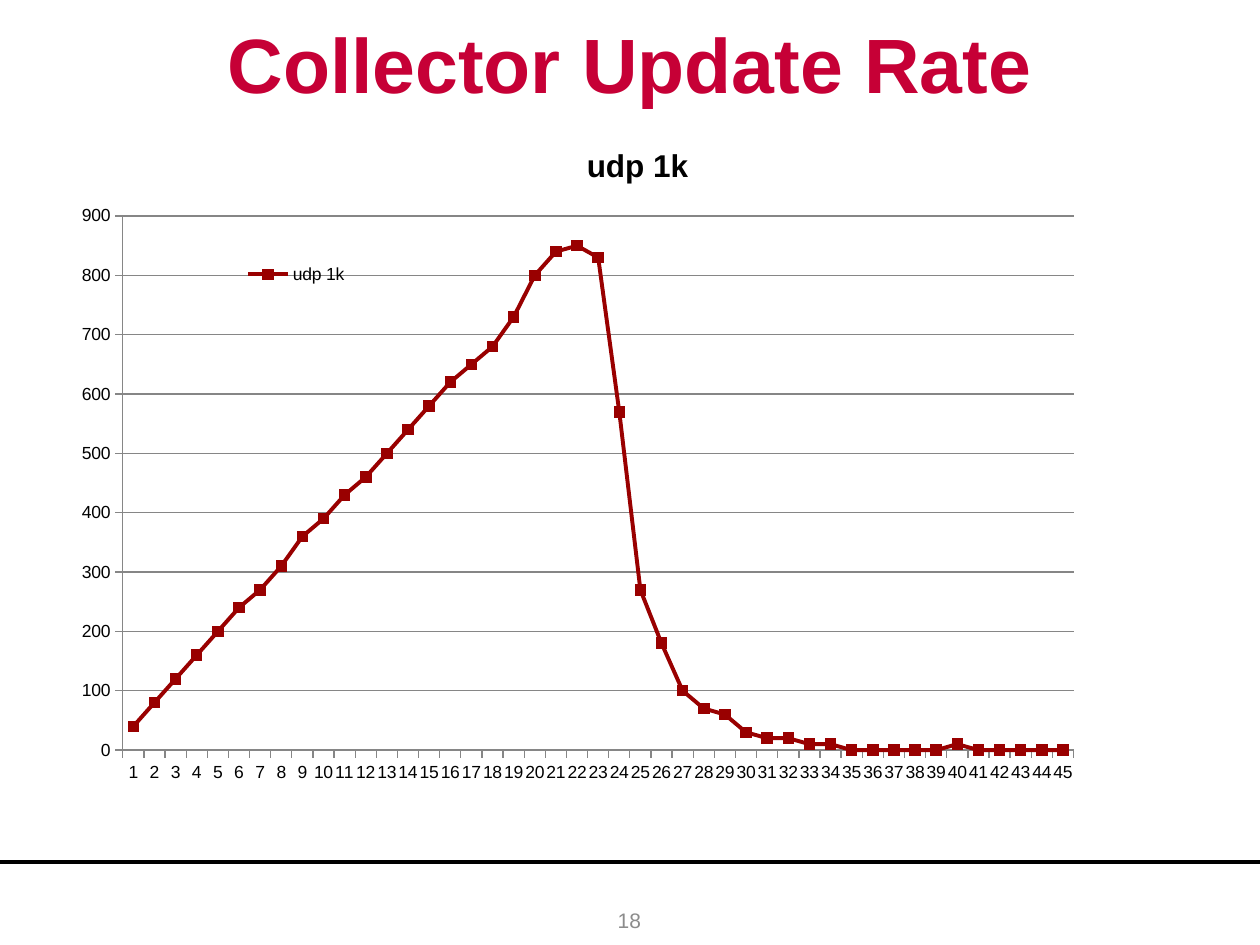
from lxml.etree import SubElement
from pptx import Presentation
from pptx.chart.data import CategoryChartData
from pptx.dml.color import RGBColor
from pptx.enum.chart import XL_CHART_TYPE, XL_LEGEND_POSITION, XL_MARKER_STYLE, XL_TICK_MARK
from pptx.enum.shapes import MSO_CONNECTOR
from pptx.enum.text import MSO_ANCHOR, PP_ALIGN
from pptx.oxml import parse_xml
from pptx.oxml.ns import nsdecls, qn
from pptx.util import Inches, Pt

FONT = "Arial"
CRIMSON = RGBColor(0xC6, 0x00, 0x36)
DARK_RED = RGBColor(0x99, 0x00, 0x00)
BLACK = RGBColor(0, 0, 0)
GRAY = RGBColor(0x8C, 0x8C, 0x8C)
AXIS_GRAY = RGBColor(0x86, 0x86, 0x86)

SERIES = "udp 1k"
RATES = [40, 80, 120, 160, 200, 240, 270, 310, 360, 390, 430, 460, 500, 540, 580,
         620, 650, 680, 730, 800, 840, 850, 830, 570, 270, 180, 100, 70, 60, 30,
         20, 20, 10, 10, 0, 0, 0, 0, 0, 10, 0, 0, 0, 0, 0]


def set_font(font, size, color, bold=False):
    font.name, font.size, font.bold = FONT, Pt(size), bold
    font.color.rgb = color


def write_text(tf, text, size, color, bold=False):
    """Centre one paragraph both ways in a text frame."""
    tf.word_wrap = True
    tf.vertical_anchor = MSO_ANCHOR.MIDDLE
    p = tf.paragraphs[0]
    p.alignment = PP_ALIGN.CENTER
    r = p.add_run()
    r.text = text
    set_font(r.font, size, color, bold)


def place(sp, x, y, w, h):
    sp.left, sp.top, sp.width, sp.height = (Inches(v) for v in (x, y, w, h))


def add_rule(s, y, width):
    line = s.shapes.add_connector(MSO_CONNECTOR.STRAIGHT, 0, Inches(y), width, Inches(y))
    line.line.color.rgb = BLACK
    line.line.width = Pt(2.25)
    SubElement(line._element.spPr, qn("a:effectLst"))


def set_layout(element, index, x, y, w, h, inner=False):
    """Fix the place of a chart part, in shares of the chart's size."""
    for old in element.findall(qn("c:layout")):
        element.remove(old)
    target = '<c:layoutTarget val="inner"/>' if inner else ""
    modes = '<c:xMode val="edge"/><c:yMode val="edge"/>'
    sizes = "".join(f'<c:{k} val="{v}"/>' for k, v in zip("xywh", (x, y, w, h)))
    element.insert(index, parse_xml(
        f'<c:layout {nsdecls("c")}><c:manualLayout>{target}{modes}{sizes}'
        "</c:manualLayout></c:layout>"))


def style_axis(axis):
    axis.major_tick_mark = XL_TICK_MARK.OUTSIDE
    axis.minor_tick_mark = XL_TICK_MARK.NONE
    axis.format.line.color.rgb = AXIS_GRAY
    set_font(axis.tick_labels.font, 10, BLACK)


def style_series(series):
    series.smooth = False
    series.format.line.color.rgb = DARK_RED
    series.format.line.width = Pt(2.25)
    marker = series.marker
    marker.style, marker.size = XL_MARKER_STYLE.SQUARE, 6
    marker.format.fill.solid()
    marker.format.fill.fore_color.rgb = DARK_RED
    marker.format.line.color.rgb = DARK_RED


def add_rate_chart(s):
    data = CategoryChartData()
    data.categories = [str(n) for n in range(1, len(RATES) + 1)]
    data.add_series(SERIES, RATES)
    box = [Inches(v) for v in (0.47, 0.94, 9.18, 5.38)]
    chart = s.shapes.add_chart(XL_CHART_TYPE.LINE_MARKERS, *box, data).chart
    set_font(chart.font, 10, BLACK)

    chart.has_title = True
    write_text(chart.chart_title.text_frame, SERIES, 18, BLACK, bold=True)

    chart.has_legend = True
    chart.legend.position = XL_LEGEND_POSITION.RIGHT
    chart.legend.include_in_layout = False
    set_font(chart.legend.font, 10, BLACK)
    set_layout(chart.legend._element, 1, 0.14, 0.2, 0.13, 0.06)

    plot = chart.plots[0]
    plot.vary_by_categories = False
    style_series(plot.series[0])
    set_layout(chart._chartSpace.chart.plotArea, 0, 0.055, 0.144, 0.822, 0.788, inner=True)

    style_axis(chart.category_axis)
    values = chart.value_axis
    style_axis(values)
    values.minimum_scale, values.maximum_scale, values.major_unit = 0, 900, 100
    values.has_major_gridlines = True
    values.major_gridlines.format.line.color.rgb = AXIS_GRAY


def main():
    prs = Presentation()
    prs.slide_width, prs.slide_height = Inches(10), Inches(7.5)
    s = prs.slides.add_slide(prs.slide_layouts[5])
    add_rule(s, 6.84, prs.slide_width)
    place(s.shapes.title, 0, 0, 10, 1)
    write_text(s.shapes.title.text_frame, "Collector Update Rate", 44, CRIMSON, bold=True)
    number = s.shapes.add_textbox(0, 0, 0, 0)
    place(number, 3.83, 7.1, 2.33, 0.4)
    write_text(number.text_frame, "18", 12, GRAY)
    add_rate_chart(s)
    prs.save("out.pptx")


if __name__ == "__main__":
    main()
